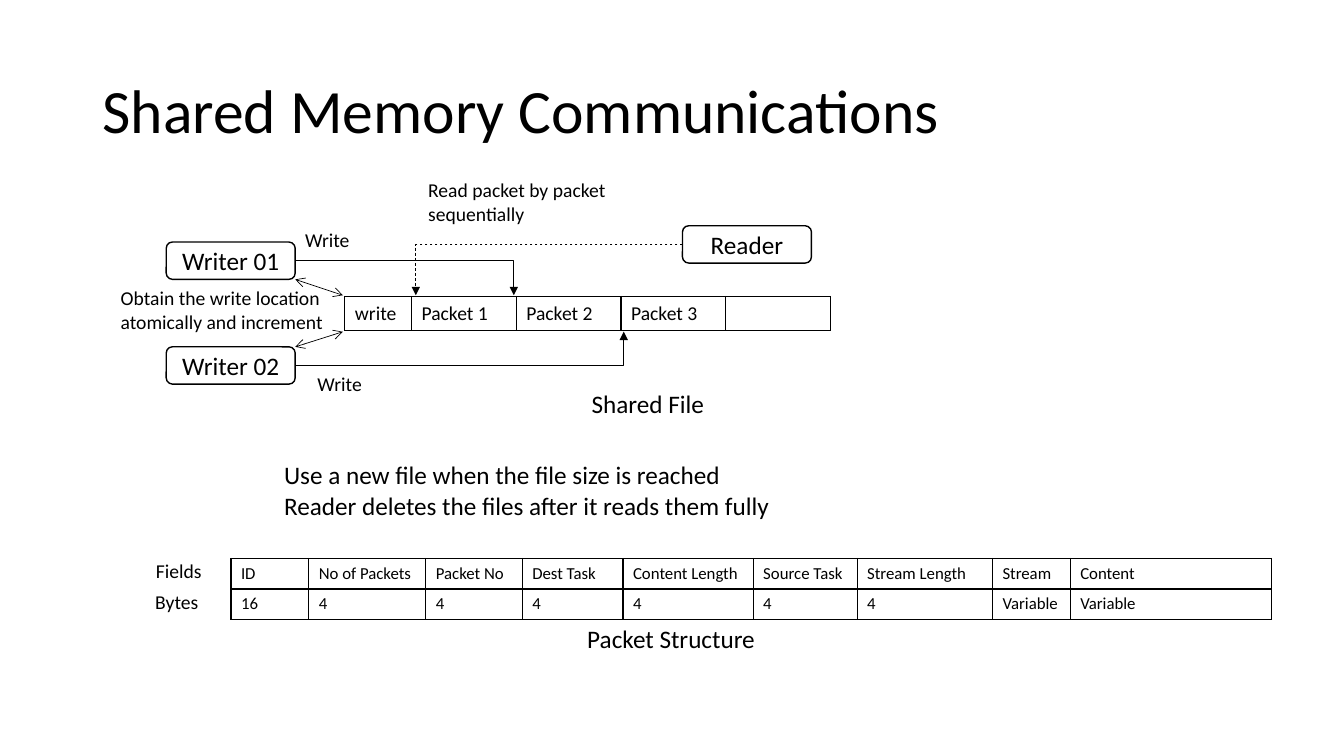
"""Build the slide on shared memory communications."""
from lxml import etree
from pptx import Presentation
from pptx.dml.color import RGBColor
from pptx.enum.dml import MSO_LINE
from pptx.enum.shapes import MSO_CONNECTOR, MSO_SHAPE
from pptx.enum.text import MSO_ANCHOR, MSO_AUTO_SIZE, PP_ALIGN
from pptx.oxml import parse_xml
from pptx.oxml.ns import nsdecls, qn
from pptx.util import Cm, Pt

BLACK = RGBColor(0x00, 0x00, 0x00)
WHITE = RGBColor(0xFF, 0xFF, 0xFF)
STRAIGHT, ELBOW = MSO_CONNECTOR.STRAIGHT, MSO_CONNECTOR.ELBOW
SOLID, DASH = MSO_LINE.SOLID, MSO_LINE.DASH
MIDDLE = MSO_ANCHOR.MIDDLE
LEFT, CENTER = PP_ALIGN.LEFT, PP_ALIGN.CENTER


def write_text(text_frame, text, size, alignment=LEFT):
    text_frame.text = text
    for paragraph in text_frame.paragraphs:
        paragraph.alignment = alignment
        paragraph.font.size = Pt(size)
        paragraph.font.name = "Calibri"
        paragraph.font.color.rgb = BLACK


def add_grid(shapes, left, top, widths, row_height, rows, size):
    frame = shapes.add_table(len(rows), len(widths), Cm(left), Cm(top),
                             Cm(sum(widths)), Cm(row_height * len(rows)))
    table = frame.table
    table.first_row = False
    table.horz_banding = False
    for column, width in zip(table.columns, widths):
        column.width = Cm(width)
    for table_row, texts in zip(table.rows, rows):
        table_row.height = Cm(row_height)
        for cell, text in zip(table_row.cells, texts):
            write_text(cell.text_frame, text, size)
            if not text:
                cell.margin_top = cell.margin_bottom = Cm(0)
            properties = cell._tc.get_or_add_tcPr()
            for side in ("lnL", "lnR", "lnT", "lnB"):
                properties.append(parse_xml(
                    f'<a:{side} {nsdecls("a")} w="12700"><a:solidFill>'
                    f'<a:srgbClr val="{BLACK}"/></a:solidFill></a:{side}>'))
            cell.fill.background()


presentation = Presentation()
presentation.slide_width = Cm(33.87)
presentation.slide_height = Cm(19.05)
slide = presentation.slides.add_slide(presentation.slide_layouts[5])
shapes = slide.shapes

title = shapes.title
title.left, title.top, title.width, title.height = Cm(2.33), Cm(1.01), Cm(29.21), Cm(3.68)
write_text(title.text_frame, "Shared Memory Communications", 44)
title.text_frame.auto_size = MSO_AUTO_SIZE.NONE
title.text_frame.vertical_anchor = MIDDLE
title.text_frame.paragraphs[0].line_spacing = 0.9

add_grid(shapes, 8.69, 7.47, [1.68] + [2.64] * 4, 0.85,
         [["write", "Packet 1", "Packet 2", "Packet 3", ""]], 14)

fields = [
    ("ID", "16", 1.96),
    ("No of Packets", "4", 2.95),
    ("Packet No", "4", 2.43),
    ("Dest Task", "4", 2.54),
    ("Content Length", "4", 3.28),
    ("Source Task", "4", 2.62),
    ("Stream Length", "4", 3.41),
    ("Stream", "Variable", 1.96),
    ("Content", "Variable", 5.08),
]
names, sizes, widths = zip(*fields)
add_grid(shapes, 5.82, 14.07, widths, 0.76, [names, sizes], 12)

processes = [("Writer 01", 4.19, 6.1), ("Writer 02", 4.19, 8.74), ("Reader", 17.2, 5.69)]
for name, left, top in processes:
    process = shapes.add_shape(MSO_SHAPE.ROUNDED_RECTANGLE, Cm(left), Cm(top), Cm(3.25), Cm(0.94))
    process.shadow.inherit = False
    process.fill.solid()
    process.fill.fore_color.rgb = WHITE
    process.line.color.rgb = BLACK
    process.line.width = Pt(1)
    process.text_frame.vertical_anchor = MIDDLE
    write_text(process.text_frame, name, 18, CENTER)

arrows = [
    (STRAIGHT, 7.44, 7.04, 8.64, 7.44, SOLID),
    (STRAIGHT, 7.44, 8.74, 8.64, 8.36, SOLID),
    (ELBOW, 7.44, 6.57, 12.95, 7.44, SOLID),
    (ELBOW, 7.44, 9.21, 15.72, 8.36, SOLID),
    (ELBOW, 17.2, 6.16, 10.48, 7.44, DASH),
]
for kind, begin_x, begin_y, end_x, end_y, dash in arrows:
    arrow = shapes.add_connector(kind, Cm(begin_x), Cm(begin_y), Cm(end_x), Cm(end_y))
    arrow.line.color.rgb = BLACK
    arrow.line.width = Pt(0.5)
    arrow.line.dash_style = dash
    properties = arrow._element.spPr
    line = properties.find(qn("a:ln"))
    if kind == ELBOW:
        adjustments = properties.find(qn("a:prstGeom")).get_or_add_avLst()
        etree.SubElement(adjustments, qn("a:gd"), name="adj1", fmla="val 100000")
        etree.SubElement(line, qn("a:tailEnd"), type="triangle")
    else:
        etree.SubElement(line, qn("a:headEnd"), type="arrow")
        etree.SubElement(line, qn("a:tailEnd"), type="arrow")
    etree.SubElement(properties, qn("a:effectLst"))

labels = [
    ("Write", 7.75, 9.25, 1.65, 0.86, 14, False),
    ("Write", 7.44, 5.61, 1.75, 0.86, 14, False),
    ("Obtain the write location atomically and increment", 2.79, 7.09, 5.84, 1.45, 14, True),
    ("Shared File", 14.66, 9.65, 3.38, 1.02, 18, False),
    ("Read packet by packet sequentially", 10.54, 4.37, 6.58, 1.45, 14, True),
    ("Use a new file when the file size is reached\n"
     "Reader deletes the files after it reads them fully", 6.91, 11.46, 12.9, 1.8, 18, False),
    ("Fields", 3.68, 13.97, 1.68, 0.86, 14, False),
    ("Bytes", 3.66, 14.73, 1.63, 0.86, 14, False),
    ("Packet Structure", 14.55, 15.57, 4.78, 1.02, 18, False),
]
for text, left, top, width, height, size, wrap in labels:
    label = shapes.add_textbox(Cm(left), Cm(top), Cm(width), Cm(height))
    label.text_frame.word_wrap = wrap
    write_text(label.text_frame, text, size)

presentation.save("out.pptx")
